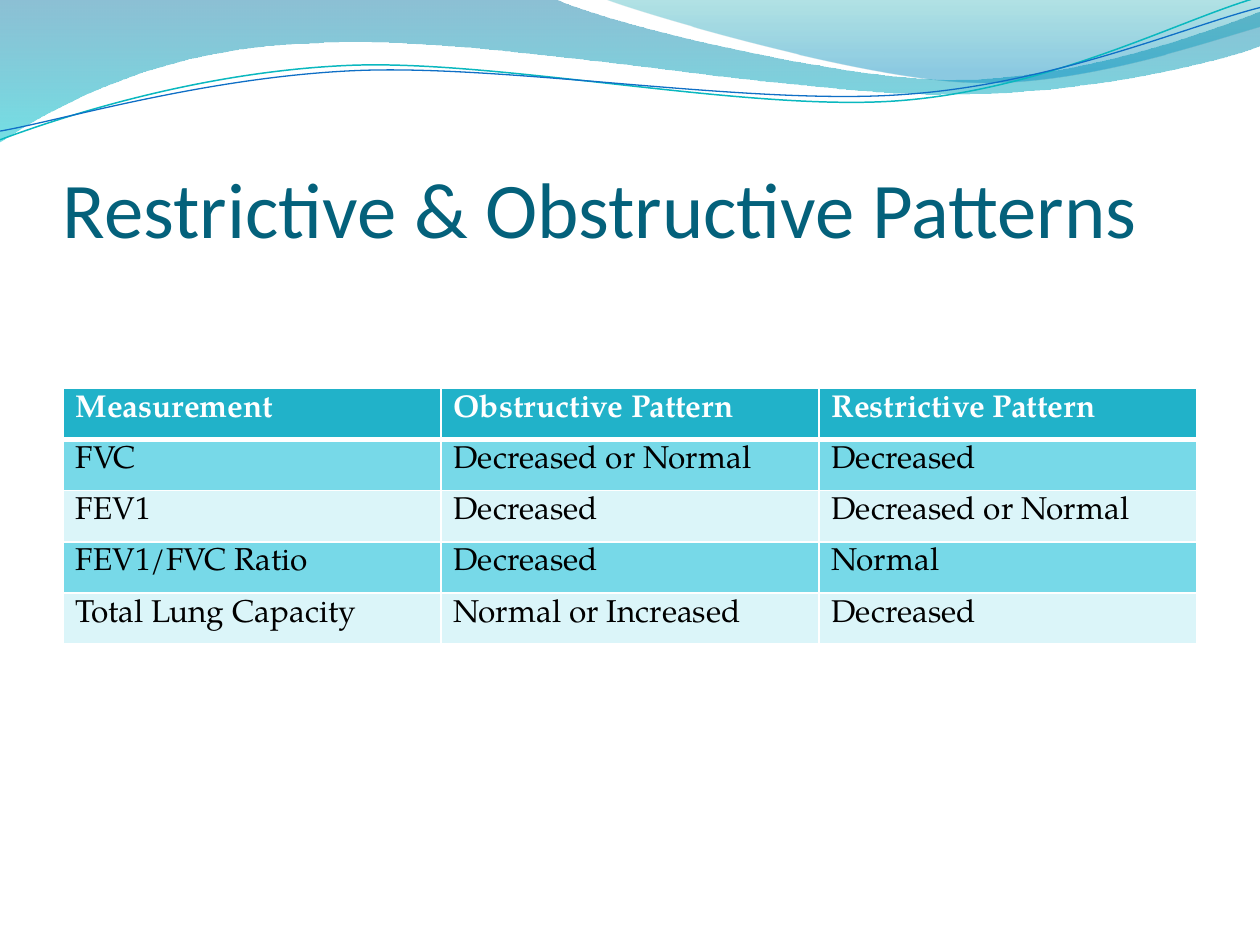
from pptx import Presentation
from pptx.dml.color import RGBColor
from pptx.enum import text
from pptx.oxml.xmlchemy import OxmlElement
from pptx.util import Pt

COLORS = {
    "title": "04617B", "header": "21B2C9", "odd": "77D9E8", "even": "DBF5F9",
    "white": "FFFFFF", "black": "000000", "teal": "0AB8BF", "blue": "0F6FC6",
    "wave_top": "0074A1", "wave_end": "00C6CF",
    "crest_top": "00A1A9", "crest_end": "008BBF",
}


def rgb(name):
    return RGBColor.from_string(COLORS[name])


def draw_curve(shapes, start, segments, closed):
    points = [(round(s[i] * 100), round(s[i + 1] * 100))
              for s in segments for i in range(0, len(s), 2)]
    builder = shapes.build_freeform(round(start[0] * 100), round(start[1] * 100), scale=Pt(1) / 100)
    builder.add_line_segments(points, close=closed)
    curve = builder.convert_to_shape()
    curve.shadow.inherit = False
    corners = iter(curve._element.xpath(".//a:lnTo"))
    for segment in segments:
        corner = next(corners)
        if len(segment) == 6:
            bezier = OxmlElement("a:cubicBezTo")
            corner.addprevious(bezier)
            for part in (corner, next(corners), next(corners)):
                bezier.append(part[0])
                part.getparent().remove(part)
    return curve


deck = Presentation()
deck.slide_width, deck.slide_height = Pt(720), Pt(540)
slide = deck.slides.add_slide(deck.slide_layouts[6])

bands = [
    ((-0.7, -0.7), [(316.8, -0.7), (342.7, 12.2, 478.1, 45.4, 545.8, 45.4),
                    (614.2, 45.4, 689.8, 18.7, 720, 6.5), (720.7, 25.9),
                    (707.8, 31.7, 626.4, 54.7, 537.1, 54),
                    (447.8, 54, 275, 20.2, 185, 24.5),
                    (92.9, 25.9, 33.1, 59.8, -0.7, 81.4)],
     [(0, "wave_top", 45), (1, "wave_end", 55)]),
    ((344.9, -0.7), [(366.5, 7.9, 491, 44.6, 553.7, 46.8),
                     (616.3, 49.7, 691.9, 23, 720, 15.1), (720, -0.7)],
     [(0, "crest_top", 30), (0.8, "crest_end", 45)]),
]
for start, segments, stops in bands:
    band = draw_curve(slide.shapes, start, segments, True)
    band.line.fill.background()
    band.fill.gradient()
    band.fill.gradient_angle = 270
    for stop, (position, color, _) in zip(band.fill.gradient_stops, stops):
        stop.position = position
        stop.color.rgb = rgb(color)
    tints = band._element.spPr.xpath(".//a:gs/a:srgbClr")
    for tint, (_, _, opacity) in zip(tints, stops):
        alpha = OxmlElement("a:alpha")
        alpha.set("val", str(opacity * 1000))
        tint.append(alpha)

strands = [
    ((0, 79.9), [(34.6, 67, 113.8, 41, 199.4, 37.4),
                 (284.4, 33.8, 427, 64.1, 513.4, 57.6),
                 (599.8, 51.1, 675.4, 10.8, 718.6, -1.4)], "teal", 0.85),
    ((0, 74.9), [(33.8, 69.1, 118.1, 43.9, 203.8, 40.3),
                 (290.2, 36.7, 429.8, 60.5, 516.2, 54),
                 (601.9, 48.2, 677.5, 15.1, 720, 4.3)], "blue", 0.75),
]
for start, segments, color, width in strands:
    strand = draw_curve(slide.shapes, start, segments, False)
    strand.fill.background()
    strand.line.color.rgb = rgb(color)
    strand.line.width = Pt(width)

title = slide.shapes.add_textbox(Pt(36), Pt(55.4), Pt(648), Pt(90)).text_frame
title.word_wrap = True
title.vertical_anchor = text.MSO_ANCHOR.BOTTOM
title.margin_left = title.margin_right = title.margin_bottom = 0
title.margin_top = Pt(3.6)
title.text = "Restrictive & Obstructive Patterns"
title_font = title.paragraphs[0].runs[0].font
title_font.name, title_font.size = "Calibri", Pt(45)
title_font.color.rgb = rgb("title")

patterns = [
    ("Measurement", "Obstructive Pattern", "Restrictive Pattern"),
    ("FVC", "Decreased or Normal", "Decreased"),
    ("FEV1", "Decreased", "Decreased or Normal"),
    ("FEV1/FVC Ratio", "Decreased", "Normal"),
    ("Total Lung Capacity", "Normal or Increased", "Decreased"),
]
table = slide.shapes.add_table(5, 3, Pt(36), Pt(222), Pt(648), Pt(146)).table
for column in table.columns:
    column.width = Pt(216)
for r, row in enumerate(patterns):
    table.rows[r].height = Pt(29.2)
    fill = "header" if r == 0 else "odd" if r % 2 else "even"
    borders = {"L": 1, "R": 1, "T": 3 if r == 1 else 1, "B": 3 if r == 0 else 1}
    for c, wording in enumerate(row):
        cell = table.cell(r, c)
        cell.text_frame.text = wording
        font = cell.text_frame.paragraphs[0].runs[0].font
        font.name, font.size, font.bold = "TeX Gyre Pagella", Pt(18), r == 0
        font.color.rgb = rgb("black" if r else "white")
        properties = cell._tc.get_or_add_tcPr()
        for side, width in borders.items():
            border = OxmlElement(f"a:ln{side}")
            border.set("w", str(Pt(width)))
            paint = OxmlElement("a:solidFill")
            white = OxmlElement("a:srgbClr")
            white.set("val", COLORS["white"])
            paint.append(white)
            border.append(paint)
            properties.append(border)
        cell.fill.solid()
        cell.fill.fore_color.rgb = rgb(fill)

deck.save("out.pptx")
